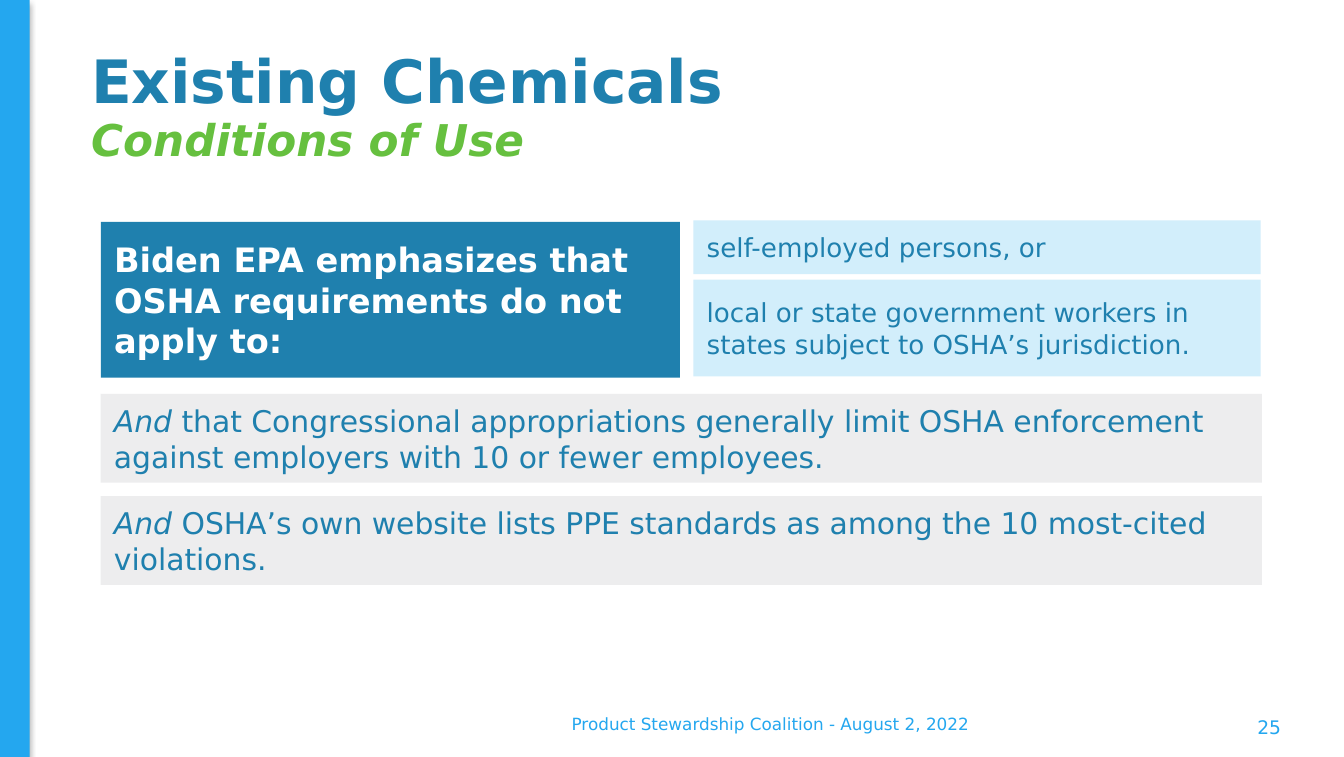
"""Build the Existing Chemicals slide on conditions of use."""
from lxml import etree
from pptx import Presentation
from pptx.dml.color import RGBColor
from pptx.enum import shapes, text
from pptx.oxml import ns
from pptx.util import Inches, Pt

FONT = "DejaVu Sans"
SKY = RGBColor(0x24, 0xA7, 0xEF)
TEAL = RGBColor(0x1F, 0x80, 0xAE)
GREEN = RGBColor(0x66, 0xC0, 0x3F)
PALE = RGBColor(0xD2, 0xEE, 0xFB)
GREY = RGBColor(0xDC, 0xDD, 0xDF)
WHITE = RGBColor(0xFF, 0xFF, 0xFF)
LEFT, CENTER, RIGHT = text.PP_ALIGN.LEFT, text.PP_ALIGN.CENTER, text.PP_ALIGN.RIGHT

HEADINGS = [
    ("Existing Chemicals", 0.2, 0.85, 32, TEAL, False),
    ("Conditions of Use", 0.79, 0.54, 23.4, GREEN, True),
]
FOOTERS = [
    ("Product Stewardship Coalition - August 2, 2022", (2.32, 5.23, 6.82, 0.3), 9, CENTER),
    ("25", (8.62, 5.31, 1.01, 0.2), 10, RIGHT),
]
PREMISE = "Biden EPA emphasizes that OSHA requirements do not apply to:"
EXEMPT = [
    ("self-employed persons, or", 1.64, 0.4),
    ("local or state government workers in states subject to OSHA’s jurisdiction.", 2.08, 0.72),
]
CAVEATS = [
    " that Congressional appropriations generally limit OSHA enforcement "
    "against employers with 10 or fewer employees.",
    " OSHA’s own website lists PPE standards as among the 10 most-cited violations.",
]
CAVEAT_TOP, CAVEAT_STEP = 2.93, 0.76


def write(shape, runs, size, color, align=LEFT, bold=False, italic=False):
    frame = shape.text_frame
    frame.word_wrap = True
    frame.vertical_anchor = text.MSO_ANCHOR.MIDDLE
    paragraph = frame.paragraphs[0]
    paragraph.alignment = align
    font = paragraph.font
    font.name, font.size, font.bold, font.italic = FONT, Pt(size), bold, italic
    font.color.rgb = color
    for words in runs:
        paragraph.add_run().text = words
    return paragraph


def add_label(slide, box, *args, **style):
    label = slide.shapes.add_textbox(*map(Inches, box))
    return write(label, *args, **style)


def add_panel(slide, box, fill):
    panel = slide.shapes.add_shape(shapes.MSO_SHAPE.RECTANGLE, *map(Inches, box))
    panel.shadow.inherit = False
    panel.fill.solid()
    panel.fill.fore_color.rgb = fill
    panel.line.fill.background()
    return panel


def add_child(parent, tag, **attributes):
    return etree.SubElement(parent, ns.qn(tag), attributes)


def cast_shadow(panel):
    effects = panel._element.spPr.find(ns.qn("a:effectLst"))
    shadow = add_child(effects, "a:outerShdw", blurRad=str(Pt(3.1)), dist=str(Pt(1.8)),
                       dir="5400000", algn="ctr", rotWithShape="0")
    add_child(add_child(shadow, "a:srgbClr", val="000000"), "a:alpha", val="35000")


def make_translucent(panel):
    color = panel._element.spPr.find(ns.qn("a:solidFill"))[0]
    add_child(color, "a:alpha", val="50000")


def main():
    deck = Presentation()
    deck.slide_width, deck.slide_height = Inches(10), Inches(5.63)
    slide = deck.slides.add_slide(deck.slide_layouts[6])

    cast_shadow(add_panel(slide, (0, 0, 0.22, 5.63), SKY))
    for words, top, height, size, color, italic in HEADINGS:
        heading = add_label(slide, (0.58, top, 8.96, height), [words], size, color,
                            bold=True, italic=italic)
        heading.line_spacing = 0.9
    for words, box, size, align in FOOTERS:
        add_label(slide, box, [words], size, SKY, align=align)

    premise = add_panel(slide, (0.75, 1.65, 4.31, 1.16), TEAL)
    write(premise, [PREMISE], 18, WHITE, bold=True)
    for words, top, height in EXEMPT:
        write(add_panel(slide, (5.16, top, 4.22, height), PALE), [words], 14, TEAL)
    for row, words in enumerate(CAVEATS):
        caveat = add_panel(slide, (0.75, CAVEAT_TOP + row * CAVEAT_STEP, 8.64, 0.66), GREY)
        make_translucent(caveat)
        paragraph = write(caveat, ["And", words], 16, TEAL)
        paragraph.runs[0].font.italic = True

    deck.save("out.pptx")


if __name__ == "__main__":
    main()
